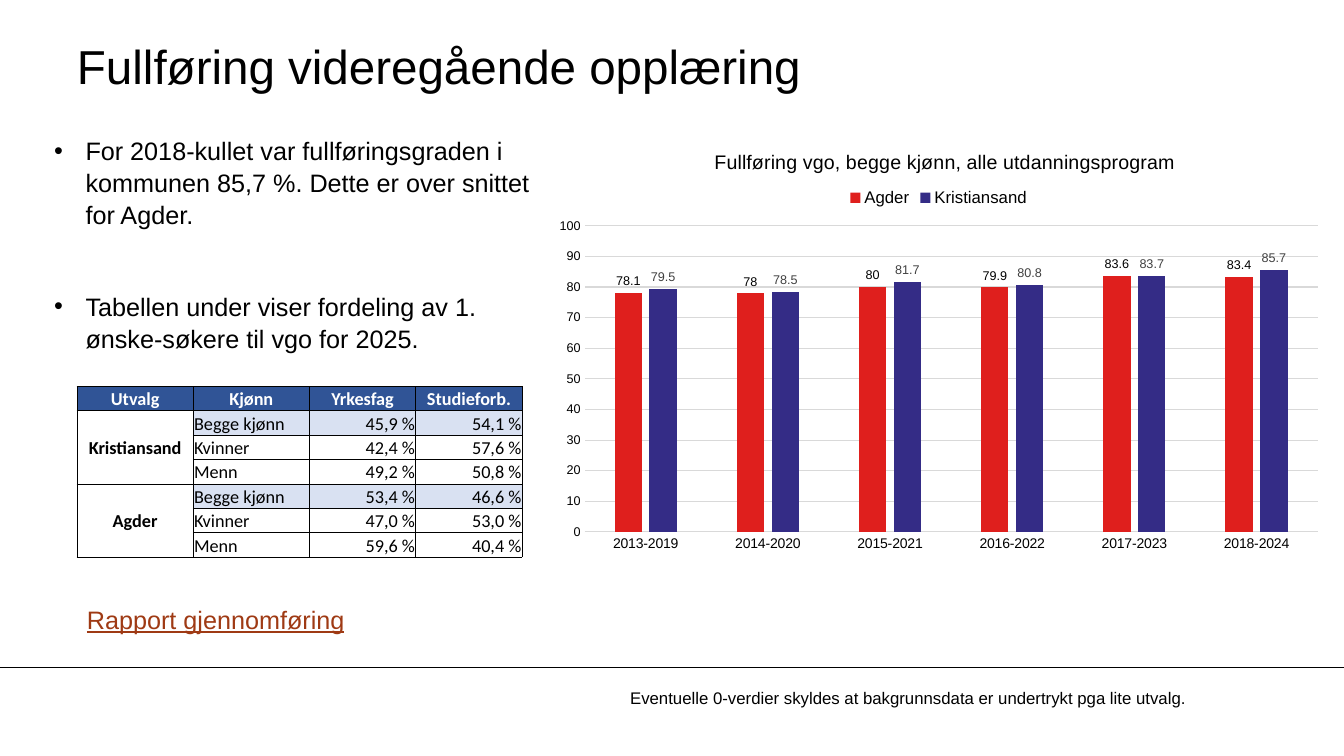
from lxml.etree import SubElement
from pptx import Presentation
from pptx.chart.data import CategoryChartData
from pptx.dml.color import RGBColor
from pptx.enum.chart import XL_CHART_TYPE, XL_LABEL_POSITION, XL_LEGEND_POSITION, XL_TICK_MARK
from pptx.enum.shapes import MSO_CONNECTOR
from pptx.enum.text import MSO_ANCHOR, PP_ALIGN
from pptx.oxml import parse_xml
from pptx.oxml.ns import nsdecls, qn
from pptx.util import Pt

BLACK = RGBColor(0x00, 0x00, 0x00)
WHITE = RGBColor(0xFF, 0xFF, 0xFF)
HEADER_BLUE = RGBColor(0x30, 0x54, 0x96)
TOTAL_BLUE = RGBColor(0xD9, 0xE1, 0xF2)
LINK_BROWN = RGBColor(0x9F, 0x3A, 0x14)
GRID_GREY = RGBColor(0xD9, 0xD9, 0xD9)
LABEL_GREY = RGBColor(0x40, 0x40, 0x40)
AGDER_RED = RGBColor(0xDF, 0x1F, 0x1D)
KRISTIANSAND_BLUE = RGBColor(0x34, 0x2C, 0x86)

SLIDE_WIDTH, SLIDE_HEIGHT = 960, 540
BULLETS = [
    "For 2018-kullet var fullføringsgraden i kommunen 85,7 %. Dette er over snittet for Agder.",
    "Tabellen under viser fordeling av 1. ønske-søkere til vgo for 2025.",
]
HEADINGS = ["Utvalg", "Kjønn", "Yrkesfag", "Studieforb."]
APPLICANTS = [
    ("Kristiansand", "Begge kjønn", "45,9 %", "54,1 %"),
    ("", "Kvinner", "42,4 %", "57,6 %"),
    ("", "Menn", "49,2 %", "50,8 %"),
    ("Agder", "Begge kjønn", "53,4 %", "46,6 %"),
    ("", "Kvinner", "47,0 %", "53,0 %"),
    ("", "Menn", "59,6 %", "40,4 %"),
]
COLUMN_WIDTHS = [83, 83, 76, 76]
GROUP_SIZE = 3
COHORTS = [f"{year}-{year + 6}" for year in range(2013, 2019)]
COMPLETION = [
    ("Agder", [78.1, 78, 80, 79.9, 83.6, 83.4], AGDER_RED, BLACK),
    ("Kristiansand", [79.5, 78.5, 81.7, 80.8, 83.7, 85.7], KRISTIANSAND_BLUE, LABEL_GREY),
]


def set_font(font, size, color=BLACK, name="Arial", bold=False):
    font.size, font.name, font.bold = Pt(size), name, bold
    font.color.rgb = color


def add_text(slide, box, text, size, color=BLACK):
    frame = slide.shapes.add_textbox(*map(Pt, box)).text_frame
    frame.word_wrap = True
    paragraph = frame.paragraphs[0]
    paragraph.text = text
    set_font(paragraph.font, size, color)
    return frame


def add_title(slide, box):
    frame = add_text(slide, box, "Fullføring videregående opplæring", 34)
    frame.margin_left = frame.margin_right = frame.margin_top = frame.margin_bottom = 0
    frame.vertical_anchor = MSO_ANCHOR.MIDDLE


def add_bullets(slide, box):
    frame = slide.shapes.add_textbox(*map(Pt, box)).text_frame
    frame.word_wrap = True
    for index, bullet in enumerate(BULLETS):
        paragraph = frame.add_paragraph() if index else frame.paragraphs[0]
        paragraph.text = bullet
        properties = paragraph._p.get_or_add_pPr()
        properties.set("marL", str(Pt(22.5)))
        properties.set("indent", str(-Pt(22.5)))
        SubElement(properties, qn("a:buFont"), typeface="Arial")
        SubElement(properties, qn("a:buChar"), char="•")
        paragraph.line_spacing = 1.06
        if index:
            paragraph.space_before = Pt(42.5)
        set_font(paragraph.font, 18)


def style_cell(cell, fill, borders=("lnL", "lnR", "lnT", "lnB")):
    cell.margin_left = cell.margin_right = cell.margin_top = Pt(0.7)
    cell.margin_bottom = 0
    properties = cell._tc.get_or_add_tcPr()
    for side in borders:
        properties.append(parse_xml(
            f'<a:{side} {nsdecls("a")} w="{Pt(0.5)}"><a:solidFill>'
            f'<a:srgbClr val="{BLACK}"/></a:solidFill></a:{side}>'))
    cell.fill.solid()
    cell.fill.fore_color.rgb = fill


def add_applicant_table(slide, box):
    rows = [HEADINGS, *APPLICANTS]
    table = slide.shapes.add_table(len(rows), len(HEADINGS), *map(Pt, box)).table
    for column, width in zip(table.columns, COLUMN_WIDTHS):
        column.width = Pt(width)
    for r, row in enumerate(rows):
        table.rows[r].height = Pt(box[3] / len(rows))
        for c, value in enumerate(row):
            cell = table.cell(r, c)
            is_header, is_region = r == 0, c == 0
            is_total = not is_region and r % GROUP_SIZE == 1
            style_cell(cell, HEADER_BLUE if is_header else TOTAL_BLUE if is_total else WHITE)
            cell.vertical_anchor = (MSO_ANCHOR.MIDDLE if is_region and not is_header
                                    else MSO_ANCHOR.BOTTOM)
            paragraph = cell.text_frame.paragraphs[0]
            paragraph.text = value
            paragraph.alignment = (PP_ALIGN.CENTER if is_header or is_region
                                   else PP_ALIGN.LEFT if c == 1 else PP_ALIGN.RIGHT)
            set_font(paragraph.font, 13, WHITE if is_header else BLACK, "Calibri",
                     is_header or is_region)
    # Each region spans its three rows
    for top in range(1, len(rows), GROUP_SIZE):
        table.cell(top, 0).merge(table.cell(top + GROUP_SIZE - 1, 0))


def set_layout(element, index, inner=False, **fractions):
    for old in element.findall(qn("c:layout")):
        element.remove(old)
    target = '<c:layoutTarget val="inner"/>' if inner else ""
    modes = "".join(f'<c:{key}Mode val="edge"/>' for key in "xy")
    values = "".join(f'<c:{key} val="{value}"/>' for key, value in fractions.items())
    element.insert(index, parse_xml(
        f'<c:layout {nsdecls("c")}><c:manualLayout>{target}{modes}{values}'
        '</c:manualLayout></c:layout>'))


def add_completion_chart(slide, box):
    data = CategoryChartData()
    data.categories = COHORTS
    for name, values, _, _ in COMPLETION:
        data.add_series(name, values)
    chart = slide.shapes.add_chart(XL_CHART_TYPE.COLUMN_CLUSTERED, *map(Pt, box), data).chart
    set_font(chart.font, 10)

    # Title and legend
    chart.has_title = True
    heading = chart.chart_title.text_frame.paragraphs[0]
    heading.text = "Fullføring vgo, begge kjønn, alle utdanningsprogram"
    set_font(heading.font, 14)
    chart.has_legend = True
    chart.legend.position = XL_LEGEND_POSITION.TOP
    chart.legend.include_in_layout = False
    set_font(chart.legend.font, 12)

    # Columns
    plot = chart.plots[0]
    plot.gap_width, plot.overlap, plot.vary_by_categories = 219, -27, False
    for series, (_, _, color, label_color) in zip(plot.series, COMPLETION):
        series.format.fill.solid()
        series.format.fill.fore_color.rgb = color
        labels = series.data_labels
        labels.show_value = True
        labels.position = XL_LABEL_POSITION.OUTSIDE_END
        set_font(labels.font, 9, label_color)

    # Axes
    cohorts, percent = chart.category_axis, chart.value_axis
    for axis, size in ((cohorts, 10), (percent, 9)):
        axis.major_tick_mark = axis.minor_tick_mark = XL_TICK_MARK.NONE
        set_font(axis.tick_labels.font, size)
    percent.minimum_scale, percent.maximum_scale, percent.major_unit = 0, 100, 10
    percent.tick_labels.number_format = "#,##0"
    percent.tick_labels.number_format_is_linked = False
    percent.format.line.fill.background()
    percent.has_major_gridlines = True
    for line in (cohorts.format.line, percent.major_gridlines.format.line):
        line.color.rgb = GRID_GREY
        line.width = Pt(0.75)

    # Places inside the chart
    set_layout(chart.chart_title._element, 1, x=0.21, y=0.04)
    set_layout(chart.legend._element, 1, x=0.38, y=0.13)
    set_layout(chart._chartSpace.chart.plotArea, 0, inner=True, x=0.05, y=0.225, w=0.93, h=0.71)


def add_footer(slide, box):
    left, top, width, _ = box
    rule = slide.shapes.add_connector(
        MSO_CONNECTOR.STRAIGHT, Pt(left), Pt(top), Pt(left + width), Pt(top))
    rule.line.color.rgb = BLACK
    rule.line.width = Pt(0.75)
    SubElement(rule._element.spPr, qn("a:effectLst"))
    add_text(slide, (left + 443, top + 11.5, 421, 22),
             "Eventuelle 0-verdier skyldes at bakgrunnsdata er undertrykt pga lite utvalg.", 12)


def add_report_line(slide, box):
    frame = add_text(slide, box, "Rapport gjennomføring", 18, LINK_BROWN)
    frame.paragraphs[0].font.underline = True


def main():
    presentation = Presentation()
    presentation.slide_width, presentation.slide_height = Pt(SLIDE_WIDTH), Pt(SLIDE_HEIGHT)
    slide = presentation.slides.add_slide(presentation.slide_layouts[6])
    add_footer(slide, (0, 476.5, SLIDE_WIDTH, 63.5))
    add_title(slide, (55, 19.5, 799, 54))
    add_bullets(slide, (31.5, 92, 372, 160))
    add_applicant_table(slide, (55, 276, sum(COLUMN_WIDTHS), 122))
    add_report_line(slide, (55, 428, 202, 29))
    add_completion_chart(slide, (389.5, 92, 563, 308))
    presentation.save("out.pptx")


if __name__ == "__main__":
    main()
